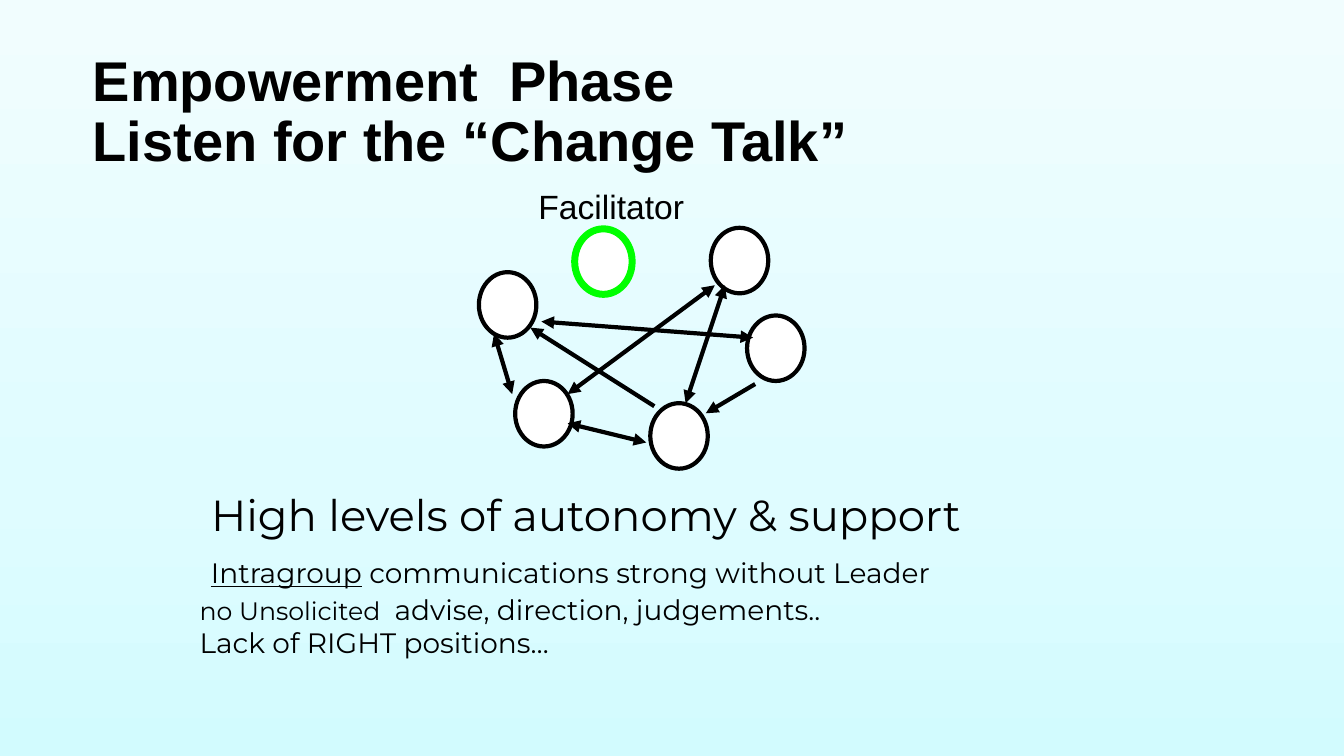
import copy

import pptx
import pptx.dml.color
import pptx.enum.shapes
import pptx.enum.text
import pptx.oxml
import pptx.oxml.ns
import pptx.util

PX = 9144
WIDTH, HEIGHT = 1333, 750
BLACK, WHITE, GREEN = "000000", "FFFFFF", "00FF00"
BACKGROUND = [(0, "D2FBFE"), (0.35, "DFFCFF"), (1, "F1FDFE")]
MEMBER_WIDTH, MEMBER_HEIGHT = 57, 65


def px(length):
    return pptx.util.Emu(length * PX)


def color(value):
    return pptx.dml.color.RGBColor.from_string(value)


class SlideBuilder:
    """Draws styled elements on the current slide."""

    def __init__(self, slide):
        self.slide = slide
        self.ink = BLACK
        self.line_width = 3

    def background(self, stops):
        fill = self.slide.background.fill
        fill.gradient()
        fill.gradient_angle = 90
        first = fill.gradient_stops[0]._gs
        while len(fill.gradient_stops) < len(stops):
            first.addnext(copy.deepcopy(first))
        for stop, (position, value) in zip(fill.gradient_stops, stops):
            stop.position = position
            stop.color.rgb = color(value)

    def text(self, left, top, width, height, paragraphs, font, bold=False,
             indent=0, line_spacing=1.0, anchor="TOP"):
        box = self.slide.shapes.add_textbox(px(left), px(top), px(width), px(height))
        frame = box.text_frame
        frame.word_wrap = True
        frame.vertical_anchor = pptx.enum.text.MSO_ANCHOR[anchor]
        frame.margin_left = frame.margin_right = 0
        frame.margin_top = frame.margin_bottom = 0
        frame.text = "\n".join("" for _ in paragraphs)
        for paragraph, runs in zip(frame.paragraphs, paragraphs):
            paragraph.line_spacing = line_spacing
            paragraph._p.get_or_add_pPr().set("indent", str(px(indent)))
            for words, size, underline in runs:
                run = paragraph.add_run()
                run.text = words
                run.font.name = font
                run.font.size = pptx.util.Pt(size)
                run.font.bold = bold
                run.font.underline = underline
                run.font.color.rgb = color(self.ink)

    def member(self, left, top, outline=BLACK, outline_width=3):
        shape = self.slide.shapes.add_shape(
            pptx.enum.shapes.MSO_SHAPE.OVAL,
            px(left), px(top), px(MEMBER_WIDTH), px(MEMBER_HEIGHT))
        shape.shadow.inherit = False
        shape.fill.solid()
        shape.fill.fore_color.rgb = color(WHITE)
        shape.line.color.rgb = color(outline)
        shape.line.width = pptx.util.Pt(outline_width)

    def arrow(self, start, end, both_ways=True):
        connector = self.slide.shapes.add_connector(
            pptx.enum.shapes.MSO_CONNECTOR.STRAIGHT,
            *[px(value) for value in start + end])
        connector.line.color.rgb = color(self.ink)
        connector.line.width = pptx.util.Pt(self.line_width)
        line = connector.line._get_or_add_ln()
        for tag in ("a:headEnd", "a:tailEnd") if both_ways else ("a:tailEnd",):
            tip = pptx.oxml.parse_xml(f"<{tag} {pptx.oxml.ns.nsdecls('a')} type='triangle'/>")
            line.append(tip)
        effects = pptx.oxml.parse_xml(f"<a:effectLst {pptx.oxml.ns.nsdecls('a')}/>")
        connector._element.spPr.append(effects)


def main():
    presentation = pptx.Presentation()
    presentation.slide_width = px(WIDTH)
    presentation.slide_height = px(HEIGHT)
    builder = SlideBuilder(presentation.slides.add_slide(presentation.slide_layouts[6]))
    builder.background(BACKGROUND)

    title = ["Empowerment  Phase", "Listen for the “Change Talk”"]
    builder.text(92, 40, 1150, 145, [[(line, 40, False)] for line in title],
                 "Arial", bold=True, line_spacing=0.9, anchor="MIDDLE")
    builder.text(530, 184, 253, 40, [[("Facilitator", 24, False)]], "Arial", indent=4)
    builder.text(194, 484, 886, 172, [
        [(" High levels of autonomy & support", 31, False)],
        [(" ", 31, False), ("Intragroup", 20, True),
         (" communications strong without Leader", 20, False)],
        [("no Unsolicited ", 18, False),
         (" advise, direction, judgements..", 20, False)],
        [("Lack of RIGHT positions…", 20, False)],
    ], "Montserrat", indent=4)

    builder.arrow((749, 381), (700, 410), both_ways=False)
    builder.member(570, 227, GREEN, 5)
    for left, top in [(475, 270), (511, 378), (705, 226), (645, 400), (741, 313)]:
        builder.member(left, top)
    builder.arrow((649, 403), (526, 325), both_ways=False)
    for start, end in [
        ((537, 319), (747, 335)),
        ((563, 420), (641, 439)),
        ((563, 391), (709, 283)),
        ((490, 331), (508, 391)),
        ((719, 283), (680, 400)),
    ]:
        builder.arrow(start, end)

    presentation.save("out.pptx")


if __name__ == "__main__":
    main()
